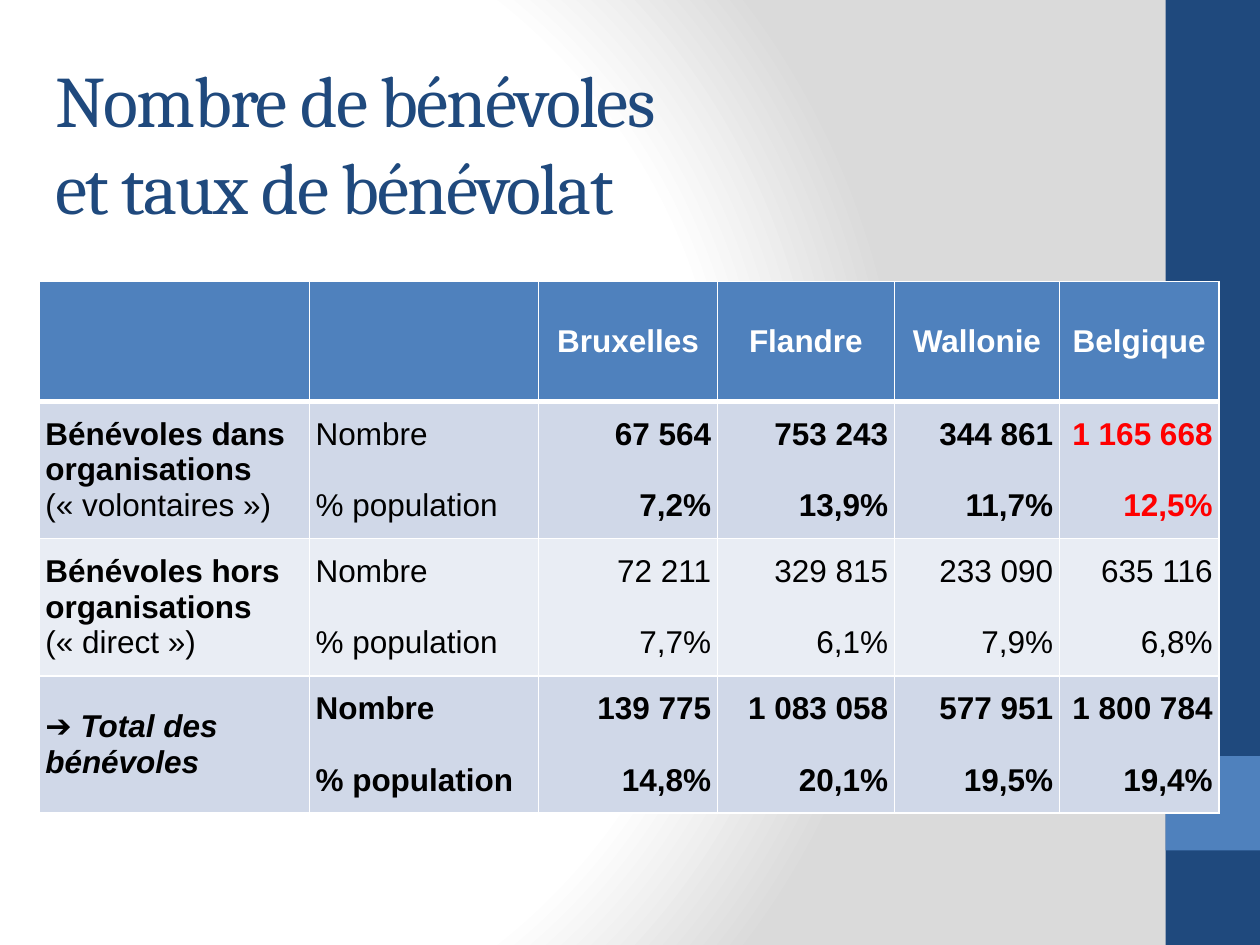
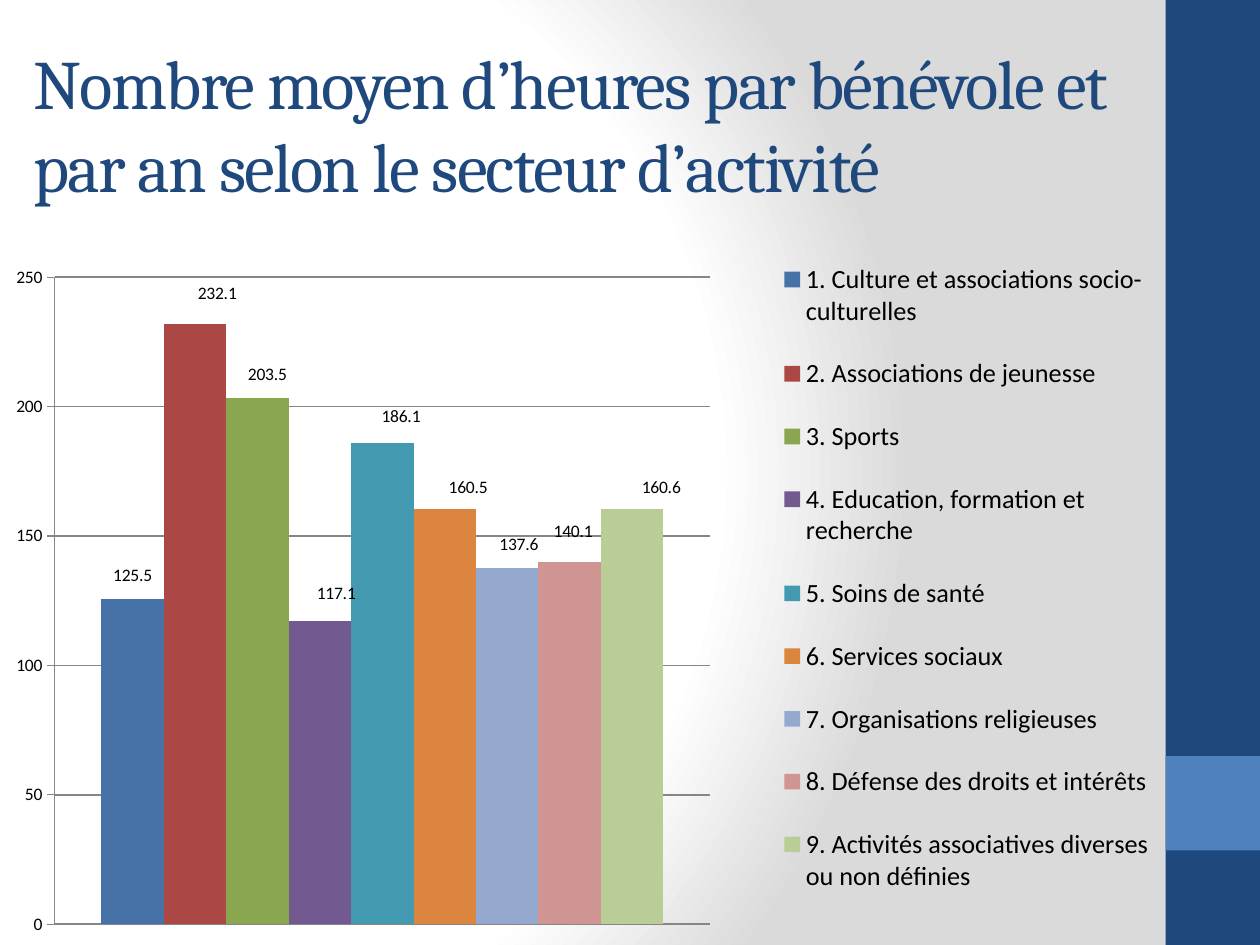
from dataclasses import dataclass

from lxml import etree
from pptx import Presentation
from pptx.chart.data import CategoryChartData
from pptx.dml.color import RGBColor
from pptx.enum.chart import XL_CHART_TYPE as ChartType
from pptx.enum.chart import XL_LABEL_POSITION as LabelPos
from pptx.enum.chart import XL_LEGEND_POSITION as LegendPos
from pptx.enum.chart import XL_TICK_MARK as Tick
from pptx.enum.shapes import MSO_SHAPE as Shape
from pptx.enum.text import MSO_ANCHOR as Anchor
from pptx.enum.text import MSO_AUTO_SIZE as AutoSize
from pptx.enum.text import PP_ALIGN as Align
from pptx.oxml import parse_xml
from pptx.oxml.ns import nsdecls, qn
from pptx.util import Inches, Pt

NAVY = RGBColor(0x1F, 0x49, 0x7D)
BLUE = RGBColor(0x4F, 0x81, 0xBD)
PALE = RGBColor(0xD0, 0xD8, 0xE8)
PALER = RGBColor(0xE9, 0xED, 0xF4)
WHITE = RGBColor(0xFF, 0xFF, 0xFF)
SILVER = RGBColor(0xDA, 0xDA, 0xDA)
GREY = RGBColor(0x86, 0x86, 0x86)
BLACK = RGBColor(0, 0, 0)
RED = RGBColor(0xFF, 0, 0)

W, H = Inches(10), Inches(7.5)
TABLE_SIZE = 18
LINE_HEIGHT = 1.15
NBSP = chr(160)


@dataclass(frozen=True)
class Box:
    """A place on the slide, in percent of its width and height."""
    x: float
    y: float
    w: float
    h: float

    def emu(self) -> tuple[int, ...]:
        shares = ((self.x, W), (self.y, H), (self.w, W), (self.h, H))
        return tuple(round(v * full / 100) for v, full in shares)


@dataclass(frozen=True)
class Band:
    box: Box
    color: RGBColor


@dataclass(frozen=True)
class Group:
    """One body row of the table: a label, then counts and rates by region."""
    label: str
    note: str
    counts: tuple[str, ...]
    rates: tuple[str, ...]
    fill: RGBColor
    measure_bold: bool = False
    values_bold: bool = False
    label_italic: bool = False
    last_color: RGBColor = BLACK


@dataclass(frozen=True)
class Sector:
    """One bar; dx and dy move its label by percent of the chart's size."""
    name: str
    hours: float
    color: str
    dx: float
    dy: float


BANDS = (
    Band(Box(92.5, 0, 7.5, 100), NAVY),
    Band(Box(92.5, 80, 7.5, 10), BLUE),
)

REGIONS = ("Bruxelles", "Flandre", "Wallonie", "Belgique")
MEASURES = ("Nombre", "% population")
COLUMN_SHARES = (21.45, 18.2, 14.2, 14.05, 13.1, 12.65)
ROW_SHARES = (12.67, 14.53, 14.53, 14.53)
GROUPS = (
    Group("Bénévoles dans organisations ", f"(«{NBSP}volontaires{NBSP}»)",
          (f"67{NBSP}564", f"753{NBSP}243", f"344{NBSP}861", f"1{NBSP}165{NBSP}668"),
          ("7,2%", "13,9%", "11,7%", "12,5%"),
          PALE, values_bold=True, last_color=RED),
    Group("Bénévoles hors organisations ", f"(«{NBSP}direct{NBSP}»)",
          ("72 211", "329 815", "233 090", "635 116"),
          ("7,7%", "6,1%", "7,9%", "6,8%"), PALER),
    Group("➔ Total des bénévoles", "",
          ("139 775", "1 083 058", "577 951", "1 800 784"),
          ("14,8%", "20,1%", "19,5%", "19,4%"),
          PALE, measure_bold=True, values_bold=True, label_italic=True),
)

SECTORS = (
    Sector("1. Culture et associations socio-culturelles", 125.5, "4672A8", 0, -1.3),
    Sector("2. Associations de jeunesse", 232.1, "AB4744", 1.9, -2.1),
    Sector("3. Sports", 203.5, "8AA64F", 0.85, -1.1),
    Sector("4. Education, formation et recherche", 117.1, "725990", 1.4, -1.8),
    Sector("5. Soins de santé", 186.1, "4299B0", 1.6, -1.5),
    Sector("6. Services sociaux", 160.5, "DC853E", 2, -0.9),
    Sector("7. Organisations religieuses", 137.6, "95A9CF", 1, -1.2),
    Sector("8. Défense des droits et intérêts", 140.1, "D09493", 0.3, -2.1),
    Sector("9. Activités associatives diverses ou non définies", 160.6, "B9CD96", 2.5, -0.9),
)


def assign(obj, **values) -> None:
    for name, value in values.items():
        setattr(obj, name, value)


def style_font(font, size: float, color: RGBColor, face: str, **more) -> None:
    assign(font, size=Pt(size), name=face, **more)
    font.color.rgb = color


def set_background(prs) -> None:
    """Give the master a radial gradient centred left of the middle."""
    master = prs.slide_master
    master.background.fill.gradient()
    grad = master.element.find(".//" + qn("a:gradFill"))
    stops = "".join(
        f'<a:gs pos="{pos * 1000}"><a:srgbClr val="{color}"/></a:gs>'
        for pos, color in ((0, WHITE), (75, WHITE), (100, SILVER)))
    grad.getparent().replace(grad, parse_xml(
        f'<a:gradFill {nsdecls("a")} rotWithShape="1"><a:gsLst>{stops}</a:gsLst>'
        '<a:path path="circle">'
        '<a:fillToRect l="20000" t="50000" r="100000" b="50000"/>'
        '</a:path></a:gradFill>'))


def add_slide(prs, title: str, box: Box, size: float, bottom: float = 0.05):
    """Add a title-only slide with its side bands and styled title."""
    s = prs.slides.add_slide(prs.slide_layouts[5])
    for band in BANDS:
        sp = s.shapes.add_shape(Shape.RECTANGLE, *band.box.emu())
        sp.shadow.inherit = False
        sp.fill.solid()
        sp.fill.fore_color.rgb = band.color
        sp.line.fill.background()
    sp = s.shapes.title
    assign(sp, **dict(zip(("left", "top", "width", "height"), box.emu())))
    tf = sp.text_frame
    tf.text = title
    assign(tf, auto_size=AutoSize.NONE, word_wrap=True,
           vertical_anchor=Anchor.MIDDLE, margin_bottom=Inches(bottom))
    p = tf.paragraphs[0]
    p.alignment = Align.LEFT
    for r in p.runs:
        style_font(r.font, size, NAVY, "Cambria")
        r.font._element.set("spc", "-100")
    return s


def set_borders(cell, bottom: float) -> None:
    tc_pr = cell._tc.get_or_add_tcPr()
    for i, (side, width) in enumerate(
            (("L", 1), ("R", 1), ("T", 1), ("B", bottom))):
        tc_pr.insert(i, parse_xml(
            f'<a:ln{side} {nsdecls("a")} w="{Pt(width)}"><a:solidFill>'
            f'<a:srgbClr val="{WHITE}"/></a:solidFill></a:ln{side}>'))


def format_cell(cell, fill: RGBColor, bottom: float = 1) -> None:
    cell.fill.solid()
    cell.fill.fore_color.rgb = fill
    assign(cell, vertical_anchor=Anchor.MIDDLE, margin_left=Inches(0.05),
           margin_right=Inches(0.05), margin_top=0, margin_bottom=0)
    set_borders(cell, bottom)


def add_run(p, text: str, color: RGBColor = BLACK, **more) -> None:
    r = p.add_run()
    r.text = text
    style_font(r.font, TABLE_SIZE, color, "Arial", **more)


def write_pair(cell, pair: tuple[str, str], align, bold: bool,
               color: RGBColor = BLACK) -> None:
    """Write a count and a rate, one line of space apart."""
    first = cell.text_frame.paragraphs[0]
    second = cell.text_frame.add_paragraph()
    second.space_before = Pt(TABLE_SIZE * LINE_HEIGHT)
    for p, text in zip((first, second), pair):
        p.alignment = align
        add_run(p, text, color, bold=bold)


def add_volunteer_table(s, box: Box) -> None:
    tbl = s.shapes.add_table(len(ROW_SHARES), len(COLUMN_SHARES), *box.emu()).table
    assign(tbl, first_row=False, horz_banding=False)
    for col, share in zip(tbl.columns, COLUMN_SHARES):
        col.width = round(W * share / 100)
    for row, share in zip(tbl.rows, ROW_SHARES):
        row.height = round(H * share / 100)

    for c, text in enumerate(("", "") + REGIONS):
        cell = tbl.cell(0, c)
        format_cell(cell, BLUE, bottom=3)
        if text:
            p = cell.text_frame.paragraphs[0]
            p.alignment = Align.CENTER
            add_run(p, text, WHITE, bold=True)

    for r, group in enumerate(GROUPS, 1):
        cells = [tbl.cell(r, c) for c in range(len(COLUMN_SHARES))]
        for cell in cells:
            format_cell(cell, group.fill)
        p = cells[0].text_frame.paragraphs[0]
        add_run(p, group.label, bold=True, italic=group.label_italic)
        if group.note:
            add_run(p, group.note, bold=False)
        write_pair(cells[1], MEASURES, Align.LEFT, group.measure_bold)
        for cell, pair in zip(cells[2:], zip(group.counts, group.rates)):
            color = group.last_color if cell is cells[-1] else BLACK
            write_pair(cell, pair, Align.RIGHT, group.values_bold, color)


def manual_layout(x: float, y: float, w: float = 0, h: float = 0, **modes):
    """Build a c:layout from modes and a place in percent of the chart."""
    layout = parse_xml(f'<c:layout {nsdecls("c")}><c:manualLayout/></c:layout>')
    place = {"x": x / 100, "y": y / 100}
    if w:
        place |= {"w": w / 100, "h": h / 100}
    for name, value in {**modes, **place}.items():
        etree.SubElement(layout[0], qn(f"c:{name}")).set("val", str(value))
    return layout


def place_part(chart, tag: str, index: int, box: Box, **modes) -> None:
    part = chart.element.find(".//" + qn(tag))
    for old in part.findall(qn("c:layout")):
        part.remove(old)
    part.insert(index, manual_layout(box.x, box.y, box.w, box.h,
                                     **modes, xMode="edge", yMode="edge"))


def add_hours_chart(s, box: Box) -> None:
    data = CategoryChartData()
    data.categories = ["1"]
    for sector in SECTORS:
        data.add_series(sector.name, [sector.hours])
    chart = s.shapes.add_chart(ChartType.COLUMN_CLUSTERED, *box.emu(), data).chart
    assign(chart, has_title=False, has_legend=True)
    style_font(chart.font, 10, BLACK, "Calibri")
    assign(chart.legend, position=LegendPos.RIGHT, include_in_layout=False)
    style_font(chart.legend.font, 15, BLACK, "Calibri")

    plot = chart.plots[0]
    assign(plot, gap_width=150, overlap=0, vary_by_categories=False)
    for series, sector in zip(plot.series, SECTORS):
        series.format.fill.solid()
        series.format.fill.fore_color.rgb = RGBColor.from_string(sector.color)
        series.points[0].data_label.position = LabelPos.OUTSIDE_END
        label = series._element.find(".//" + qn("c:dLbl"))
        label.insert(1, manual_layout(sector.dx, sector.dy))
        for leader in series._element.iter(qn("c:showLeaderLines")):
            leader.set("val", "0")

    chart.category_axis.visible = False
    axis = chart.value_axis
    assign(axis, minimum_scale=0, maximum_scale=250, major_unit=50,
           has_major_gridlines=True, major_tick_mark=Tick.CROSS)
    for line, width in ((axis.format.line, 0.75),
                        (axis.major_gridlines.format.line, 1)):
        line.color.rgb = GREY
        line.width = Pt(width)

    place_part(chart, "c:plotArea", 0, Box(5.1, 9.1, 56, 88.1), layoutTarget="inner")
    place_part(chart, "c:legend", 1, Box(67, 3, 32, 94))


def main() -> None:
    prs = Presentation()
    assign(prs, slide_width=W, slide_height=H)
    set_background(prs)

    s = add_slide(prs, "Nombre de bénévoles \vet taux de bénévolat",
                  Box(3.4, 7.8, 100.9, 14.4), 41.4)
    add_volunteer_table(s, Box(3.1, 29.8, 93.65, 56.26))

    s = add_slide(prs, "Nombre moyen d’heures par bénévole et par an "
                       "selon le secteur d’activité",
                  Box(1.65, 6.53, 90, 22.4), 39.6, bottom=0.75)
    add_hours_chart(s, Box(-0.4, 22.27, 92.9, 77.73))
    prs.save("out.pptx")


if __name__ == "__main__":
    main()
